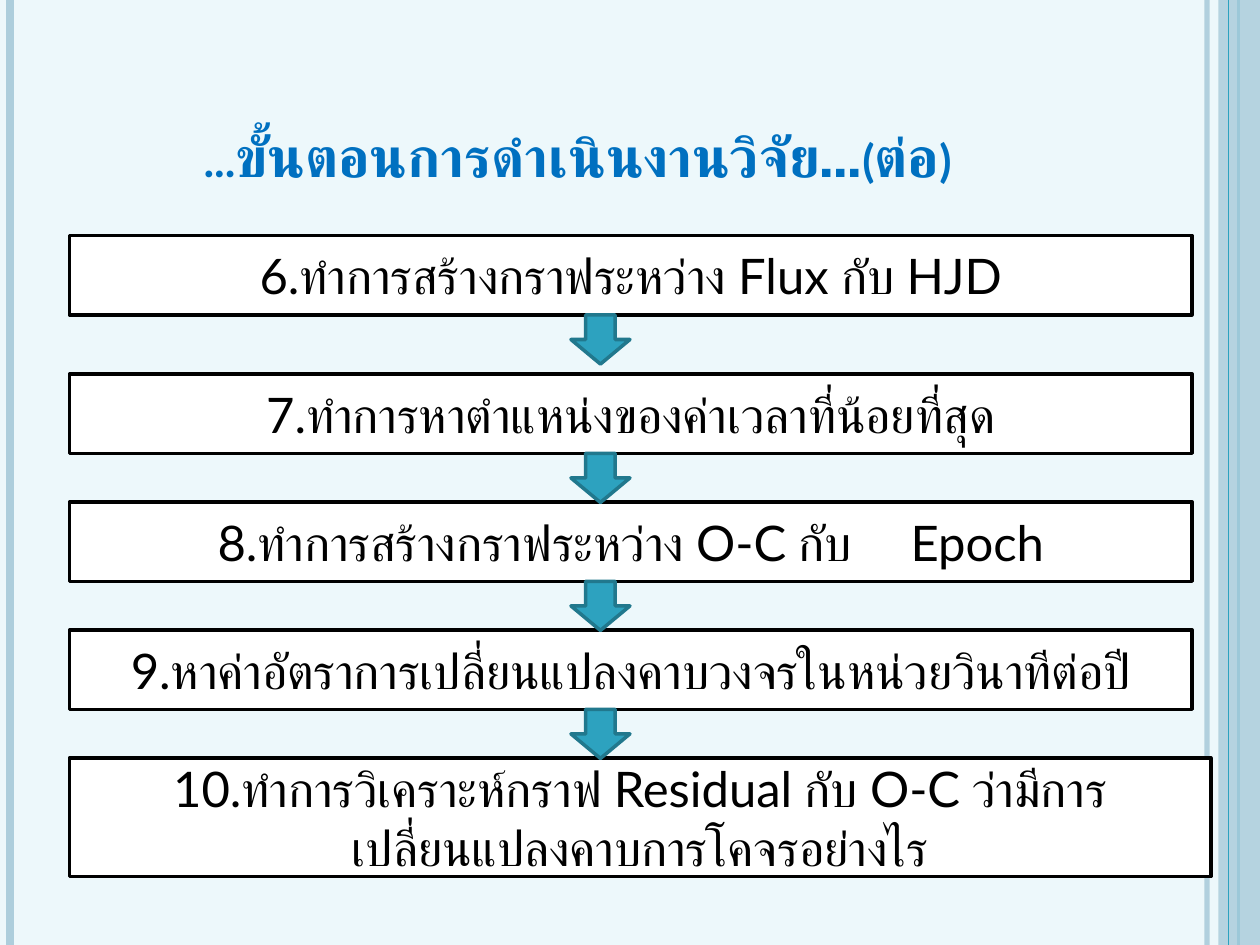
from lxml.etree import SubElement
from pptx import Presentation
from pptx.dml.color import RGBColor
from pptx.enum.shapes import MSO_CONNECTOR as Connector, MSO_SHAPE as Shape
from pptx.enum.text import MSO_ANCHOR as Anchor, PP_ALIGN as Align
from pptx.oxml.ns import qn
from pptx.util import Cm, Pt

COLORS = {
    "background": "EDF8FB", "stripe": "ADCEDC", "teal": "2DA2BF",
    "arrow_edge": "21788D", "title": "0070C0", "white": "FFFFFF", "black": "000000",
}
FONT = "Lato"
WIDTH, HEIGHT = 25.4, 19.05


def paint(format_, color, opacity=100):
    """Give a fill a solid colour, with opacity in percent."""
    format_.solid()
    format_.fore_color.rgb = RGBColor.from_string(COLORS[color])
    if opacity < 100:
        node = format_._xPr.find(qn("a:solidFill"))[0]
        SubElement(node, qn("a:alpha"), val=str(opacity * 1000))


def write(box, text, size, color, anchor):
    """Put one centred paragraph in a box and return its font."""
    frame = box.text_frame
    frame.word_wrap = True
    frame.vertical_anchor = anchor
    frame.text = text
    para = frame.paragraphs[0]
    para.alignment = Align.CENTER
    font = para.runs[0].font
    font.name, font.size = FONT, Pt(size)
    font.color.rgb = RGBColor.from_string(COLORS[color])
    return font


deck = Presentation()
deck.slide_width, deck.slide_height = Cm(WIDTH), Cm(HEIGHT)
page = deck.slides.add_slide(deck.slide_layouts[6])
paint(page.background.fill, "background")

# Vertical stripes; the band lies over the first three and under the last
stripes = [
    (24.33, "stripe", 3, 93),
    (0.2, "stripe", 4.5, 100),
    (24.97, "teal", 1.5, 100),
    (24.77, "teal", 0.75, 100),
]
for number, (x, color, weight, opacity) in enumerate(stripes):
    if number == 3:
        band = page.shapes.add_shape(Shape.RECTANGLE, Cm(24.56), 0, Cm(0.84), Cm(HEIGHT))
        band.shadow.inherit = False
        paint(band.fill, "stripe", 87)
        band.line.fill.background()
    stripe = page.shapes.add_connector(Connector.STRAIGHT, Cm(x), 0, Cm(x), Cm(HEIGHT))
    stripe.line.width = Pt(weight)
    paint(stripe.line.fill, color, opacity)
    SubElement(stripe._element.spPr, qn("a:effectLst"))

title = page.shapes.add_textbox(Cm(1.27), Cm(0.76), Cm(20.75), Cm(3.18))
title_font = write(title, "...ขั้นตอนการดำเนินงานวิจัย…(ต่อ)", 32, "title", Anchor.BOTTOM)
title_font.bold = True
title_font._element.set("cap", "small")

# Steps: text, top, width, height
LEFT, STEP_WIDTH, STEP_HEIGHT = 1.4, 22.63, 1.6
SECOND_TOP, PITCH = 7.54, 2.58
steps = [
    ("6.ทำการสร้างกราฟระหว่าง Flux กับ HJD", 4.75, STEP_WIDTH, STEP_HEIGHT),
    ("7.ทำการหาตำแหน่งของค่าเวลาที่น้อยที่สุด", SECOND_TOP, STEP_WIDTH, STEP_HEIGHT),
    ("8.ทำการสร้างกราฟระหว่าง O-C กับ \tEpoch", SECOND_TOP + PITCH, STEP_WIDTH, STEP_HEIGHT),
    ("9.หาค่าอัตราการเปลี่ยนแปลงคาบวงจรในหน่วยวินาทีต่อปี",
     SECOND_TOP + 2 * PITCH, STEP_WIDTH, STEP_HEIGHT),
    ("10.ทำการวิเคราะห์กราฟ Residual กับ O-C ว่ามีการเปลี่ยนแปลงคาบการโคจรอย่างไร",
     SECOND_TOP + 3 * PITCH, 23.01, 2.39),
]
for text, top, width, height in steps:
    box = page.shapes.add_shape(Shape.RECTANGLE, Cm(LEFT), Cm(top), Cm(width), Cm(height))
    box.shadow.inherit = False
    paint(box.fill, "white")
    paint(box.line.fill, "black")
    box.line.width = Pt(2)
    write(box, text, 28, "black", Anchor.MIDDLE)

for text, top, width, height in steps[:-1]:
    arrow = page.shapes.add_shape(
        Shape.DOWN_ARROW, Cm(11.51), Cm(top + height), Cm(1.19), Cm(0.99))
    arrow.shadow.inherit = False
    paint(arrow.fill, "teal")
    paint(arrow.line.fill, "arrow_edge")
    arrow.line.width = Pt(2)

deck.save("out.pptx")
